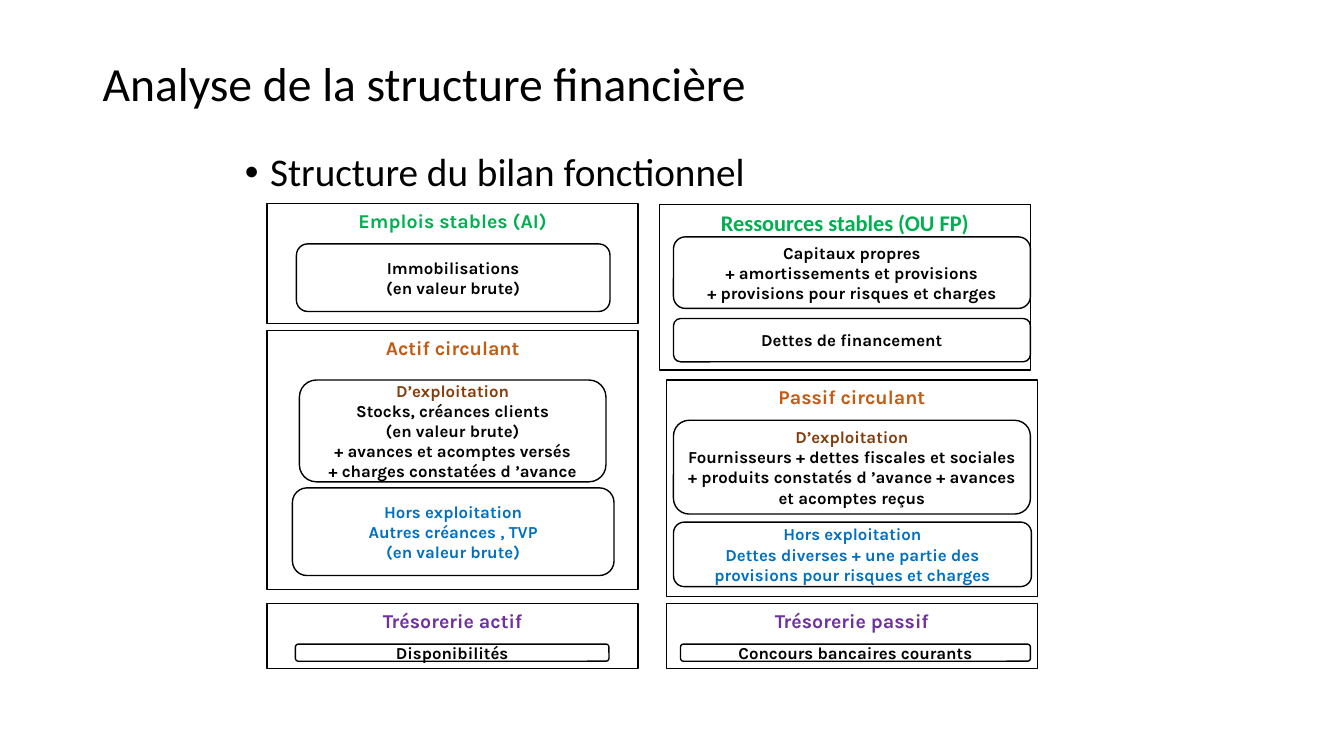
"""Builds a slide showing the structure of a functional balance sheet."""
from lxml import etree
from pptx import Presentation
from pptx.dml.color import RGBColor
from pptx.enum import shapes, text
from pptx.oxml.ns import qn
from pptx.util import Inches, Pt

COLOURS = {
    "black": "000000", "white": "FFFFFF", "green": "00B050", "orange": "C55A11",
    "brown": "843C0B", "blue": "0070C0", "purple": "7030A0",
}
HEADLINE = "Analyse de la structure financière"
SUBJECT = "Structure du bilan fonctionnel"
PANEL_WIDTH = 3.68

# Panel: left, top, height, heading, colour, font, size, boxes
# Box: left, top, width, height, colour of first line, colour of the rest, lines
PANELS = [
    (6.61, 5.99, 0.64, "Trésorerie passif", "purple", "Karla", 14, [
        (6.75, 6.39, 3.47, 0.17, "black", "black", ["Concours bancaires courants"]),
    ]),
    (6.54, 2.03, 1.64, "Ressources stables (OU FP)", "green", "Calibri", 16, [
        (6.68, 2.35, 3.54, 0.71, "black", "black", [
            "Capitaux propres",
            "+ amortissements et provisions",
            "+ provisions pour risques et charges"]),
        (6.68, 3.16, 3.54, 0.43, "black", "black", ["Dettes de financement"]),
    ]),
    (6.61, 3.77, 2.15, "Passif circulant", "orange", "Karla", 14, [
        (6.68, 4.17, 3.54, 0.93, "brown", "black", [
            "D’exploitation",
            "Fournisseurs + dettes fiscales et sociales + produits constatés "
            "d ’avance + avances et acomptes reçus"]),
        (6.68, 5.18, 3.55, 0.64, "blue", "blue", [
            "Hors exploitation",
            "Dettes diverses + une partie des provisions pour risques et charges"]),
    ]),
    (2.65, 2.02, 1.19, "Emplois stables (AI)", "green", "Karla", 14, [
        (2.94, 2.42, 3.11, 0.67, "black", "black", [
            "Immobilisations", "(en valeur brute)"]),
    ]),
    (2.65, 3.28, 2.57, "Actif circulant", "orange", "Karla", 14, [
        (2.97, 3.77, 3.04, 1.01, "brown", "black", [
            "D’exploitation",
            "Stocks, créances clients",
            "(en valeur brute)",
            "+ avances et acomptes versés",
            "+ charges constatées d ’avance"]),
        (2.9, 4.84, 3.19, 0.87, "blue", "blue", [
            "Hors exploitation", "Autres créances , TVP", "(en valeur brute)"]),
    ]),
    (2.65, 5.99, 0.64, "Trésorerie actif", "purple", "Karla", 14, [
        (2.93, 6.39, 3.11, 0.17, "black", "black", ["Disponibilités"]),
    ]),
]


def rgb(name):
    """Returns a named colour."""
    return RGBColor.from_string(COLOURS[name])


def style(paragraph, font, size, colour, bold=False):
    """Sets the font of a paragraph."""
    paragraph.font.name = font
    paragraph.font.size = Pt(size)
    paragraph.font.bold = bold
    paragraph.font.color.rgb = rgb(colour)


def add_text(slide, place, words, size):
    """Adds a text box of one paragraph and returns its frame."""
    frame = slide.shapes.add_textbox(*map(Inches, place)).text_frame
    frame.word_wrap = True
    paragraph = frame.paragraphs[0]
    paragraph.text = words
    paragraph.line_spacing = 0.9
    style(paragraph, "Calibri", size, "black")
    return frame


def add_box(slide, kind, place, lines, font, size, colours, anchor):
    """Adds an outlined box with centred bold lines and returns its frame."""
    box = slide.shapes.add_shape(kind, *map(Inches, place))
    box.shadow.inherit = False
    box.fill.solid()
    box.fill.fore_color.rgb = rgb("white")
    box.line.color.rgb = rgb("black")
    box.line.width = Pt(1)
    frame = box.text_frame
    frame.word_wrap = True
    frame.vertical_anchor = anchor
    frame.margin_left = frame.margin_right = Inches(0.09)
    for index, line in enumerate(lines):
        paragraph = frame.add_paragraph() if index else frame.paragraphs[0]
        paragraph.text = line
        paragraph.alignment = text.PP_ALIGN.CENTER
        style(paragraph, font, size, colours[min(index, 1)], True)
    return frame


def main():
    """Builds and saves the slide."""
    deck = Presentation()
    deck.slide_width, deck.slide_height = Inches(13.33), Inches(7.5)
    slide = deck.slides.add_slide(deck.slide_layouts[6])

    headline = add_text(slide, (0.92, 0.4, 11.5, 1.45), HEADLINE, 34)
    headline.margin_top = Inches(0.2)

    subject = add_text(slide, (2.33, 1.47, 8.67, 4.83), SUBJECT, 28).paragraphs[0]
    subject.space_before = Pt(10)
    properties = subject._p.get_or_add_pPr()
    properties.set("marL", str(Inches(0.25)))
    properties.set("indent", str(Inches(-0.25)))
    bullet_font = etree.Element(qn("a:buFont"), typeface="Arial")
    bullet = etree.Element(qn("a:buChar"), char="•")
    default_run = properties.find(qn("a:defRPr"))
    default_run.addprevious(bullet_font)
    default_run.addprevious(bullet)

    for left, top, height, heading, colour, font, size, boxes in PANELS:
        add_box(slide, shapes.MSO_SHAPE.RECTANGLE, (left, top, PANEL_WIDTH, height),
                [heading], font, size, [colour], text.MSO_ANCHOR.TOP)
        for *place, first, rest, lines in boxes:
            add_box(slide, shapes.MSO_SHAPE.ROUNDED_RECTANGLE, place, lines,
                    "Karla", 12, [first, rest], text.MSO_ANCHOR.MIDDLE)

    deck.save("out.pptx")


if __name__ == "__main__":
    main()
